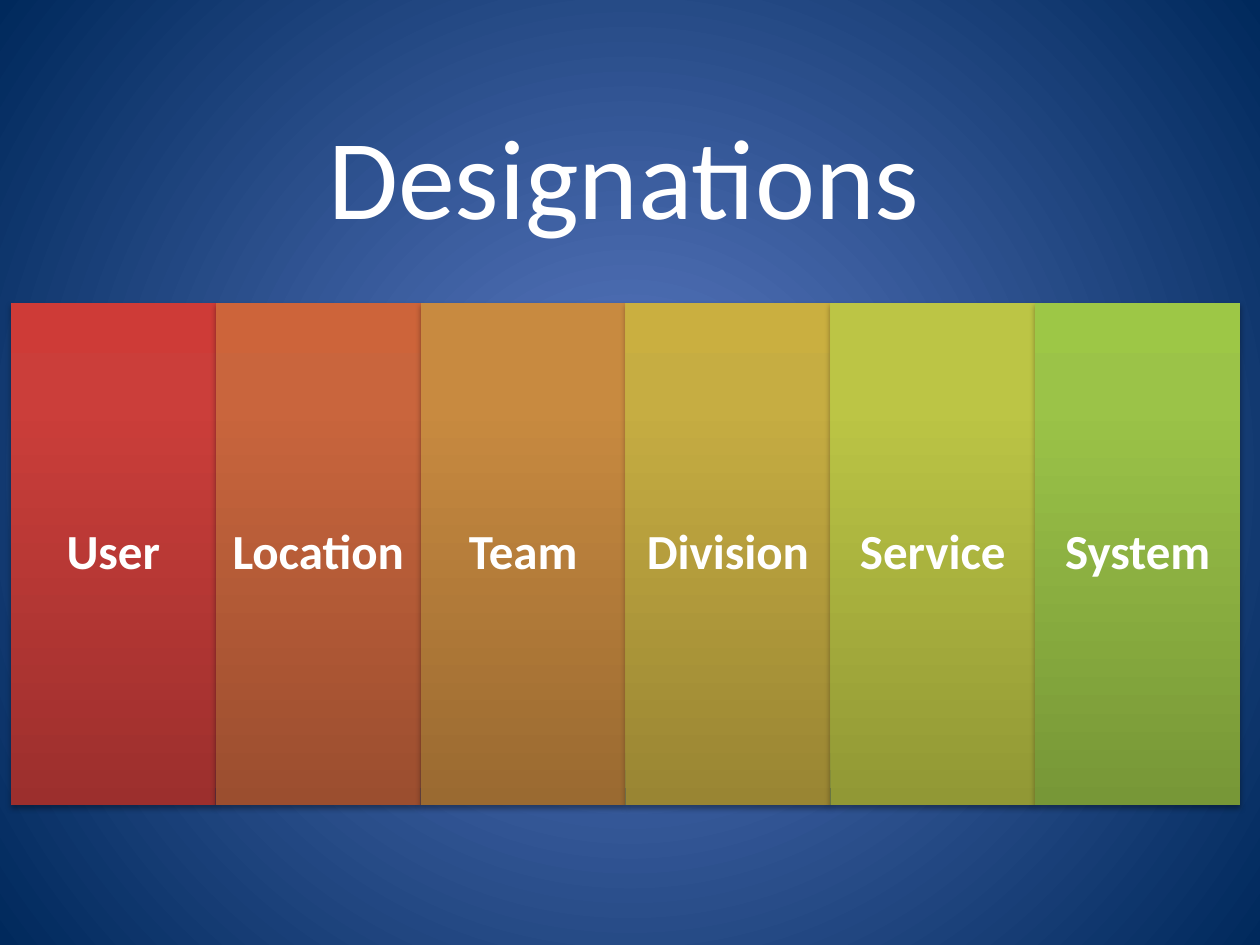
from dataclasses import dataclass

from lxml import etree
from pptx import Presentation
from pptx.dml.color import RGBColor
from pptx.enum.shapes import MSO_SHAPE
from pptx.enum.text import MSO_ANCHOR, PP_ALIGN
from pptx.oxml import parse_xml
from pptx.oxml.ns import nsdecls, qn
from pptx.util import Cm, Pt

RECT = MSO_SHAPE.RECTANGLE
MIDDLE = MSO_ANCHOR.MIDDLE
CENTER = PP_ALIGN.CENTER


@dataclass(frozen=True)
class Theme:
    font: str = "Calibri"
    text: str = "FFFFFF"
    shadow: str = "000000"
    background: tuple = ((0, "5E7CC5"), (100, "00295C"))
    title_size: int = 65
    label_size: int = 28


THEME = Theme()
DESIGNATIONS = [
    ("User", "9C2F2D", "CB3E3A", "CE3B37"),
    ("Location", "9B4E2F", "C9653D", "CD643A"),
    ("Team", "9A6A31", "C88A40", "CB8B3D"),
    ("Division", "998533", "C6AD42", "CAAF40"),
    ("Service", "919835", "BCC545", "BFC843"),
    ("System", "779737", "9BC348", "9DC746"),
]
UPWARD = '<a:lin ang="16200000" scaled="0"/>'
RADIAL = (
    '<a:path path="circle">'
    '<a:fillToRect l="50000" t="50000" r="50000" b="50000"/></a:path>'
)
LEFT, TOP = 0.22, 6.1
BAR_WIDTH, BAR_HEIGHT = 4.13, 10.13


def set_gradient(obj, fill, stops, direction):
    fill.background()
    old = obj.element.find(".//" + qn("a:noFill"))
    gs = "".join(
        f'<a:gs pos="{pos * 1000}"><a:srgbClr val="{color}"/></a:gs>'
        for pos, color in stops
    )
    gradient = parse_xml(
        f'<a:gradFill {nsdecls("a")} rotWithShape="1">'
        f"<a:gsLst>{gs}</a:gsLst>{direction}</a:gradFill>"
    )
    old.getparent().replace(old, gradient)


def add_shadow(sp):
    sp.shadow.inherit = False
    effects = sp.element.spPr.find(qn("a:effectLst"))
    shadow = etree.SubElement(
        effects, qn("a:outerShdw"), blurRad=str(Pt(3.1)),
        dist=str(Pt(1.8)), dir="5400000", rotWithShape="0",
    )
    color = etree.SubElement(shadow, qn("a:srgbClr"), val=THEME.shadow)
    etree.SubElement(color, qn("a:alpha"), val="35000")


def set_text(sp, text, size, inset, bold=False):
    tf = sp.text_frame
    tf.text = text
    tf.word_wrap = True
    tf.vertical_anchor = MIDDLE
    tf.margin_left = tf.margin_right = Cm(inset)
    tf.margin_top = tf.margin_bottom = Cm(inset)
    p = tf.paragraphs[0]
    p.alignment = CENTER
    p.line_spacing = 0.9
    font = p.runs[0].font
    font.name = THEME.font
    font.size = Pt(size)
    font.bold = bold
    font.color.rgb = RGBColor.from_string(THEME.text)


def add_title(s, text):
    sp = s.shapes.add_textbox(Cm(0.2), Cm(1.27), Cm(24.77), Cm(4.83))
    set_text(sp, text, THEME.title_size, 0.69)


def add_bar(s, index, label, colors):
    sp = s.shapes.add_shape(
        RECT, Cm(LEFT + index * BAR_WIDTH), Cm(TOP),
        Cm(BAR_WIDTH), Cm(BAR_HEIGHT),
    )
    set_gradient(sp, sp.fill, zip((0, 80, 100), colors), UPWARD)
    sp.line.fill.background()
    add_shadow(sp)
    set_text(sp, label, THEME.label_size, 0.3, bold=True)


def main():
    prs = Presentation()
    prs.slide_width, prs.slide_height = Cm(25.4), Cm(19.05)
    s = prs.slides.add_slide(prs.slide_layouts[6])
    set_gradient(s, s.background.fill, THEME.background, RADIAL)
    add_title(s, "Designations")
    for index, (label, *colors) in enumerate(DESIGNATIONS):
        add_bar(s, index, label, colors)
    prs.save("out.pptx")


if __name__ == "__main__":
    main()
